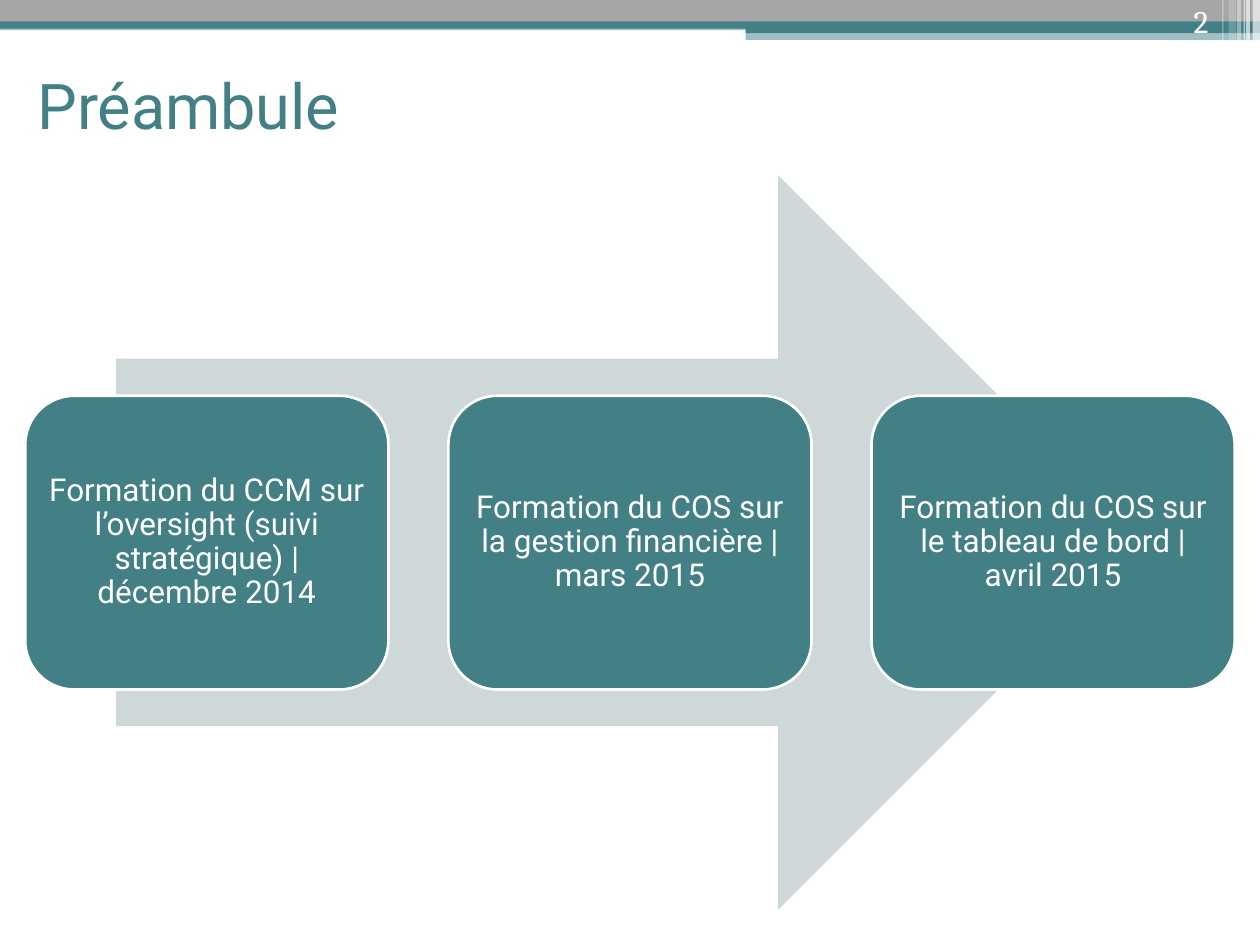
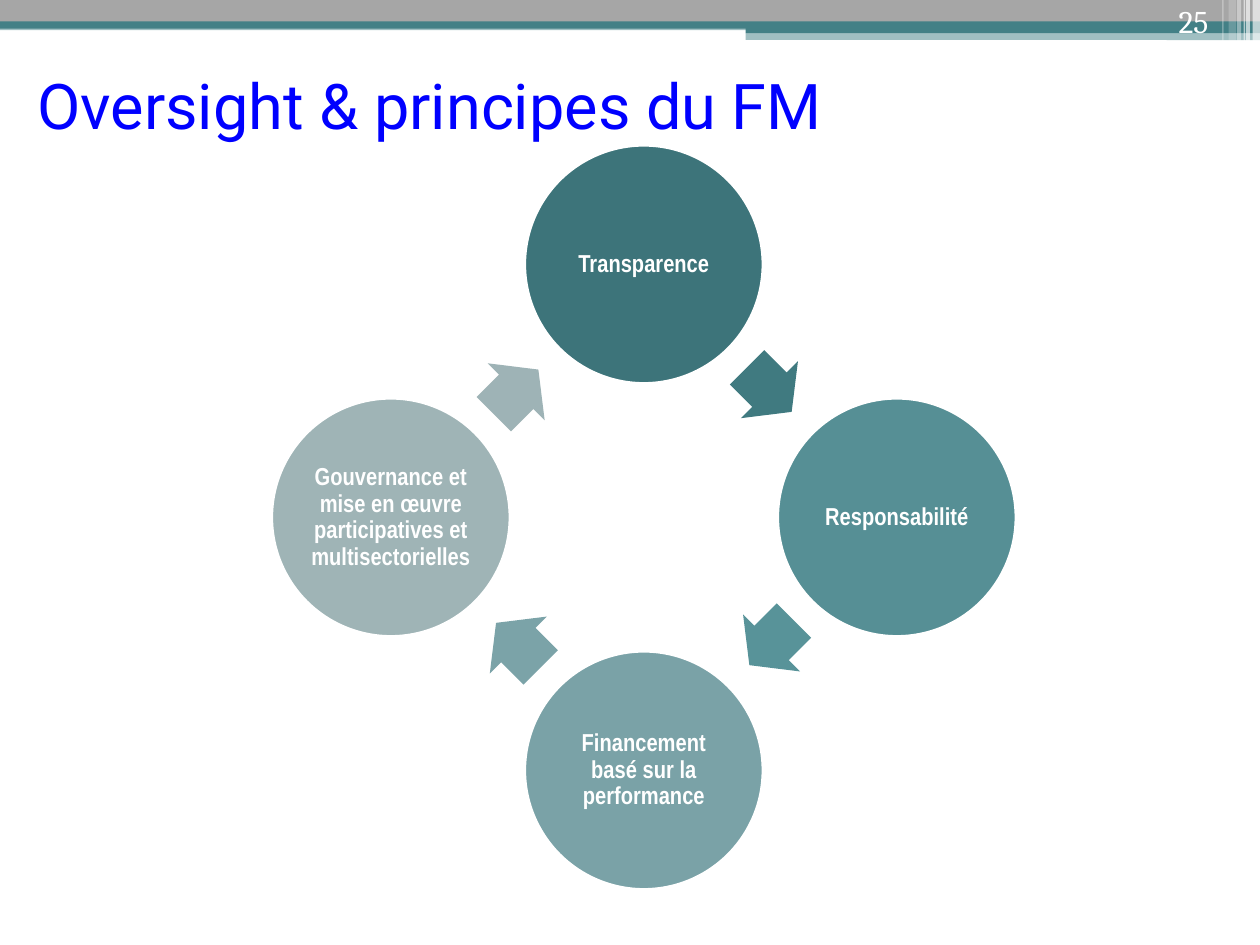
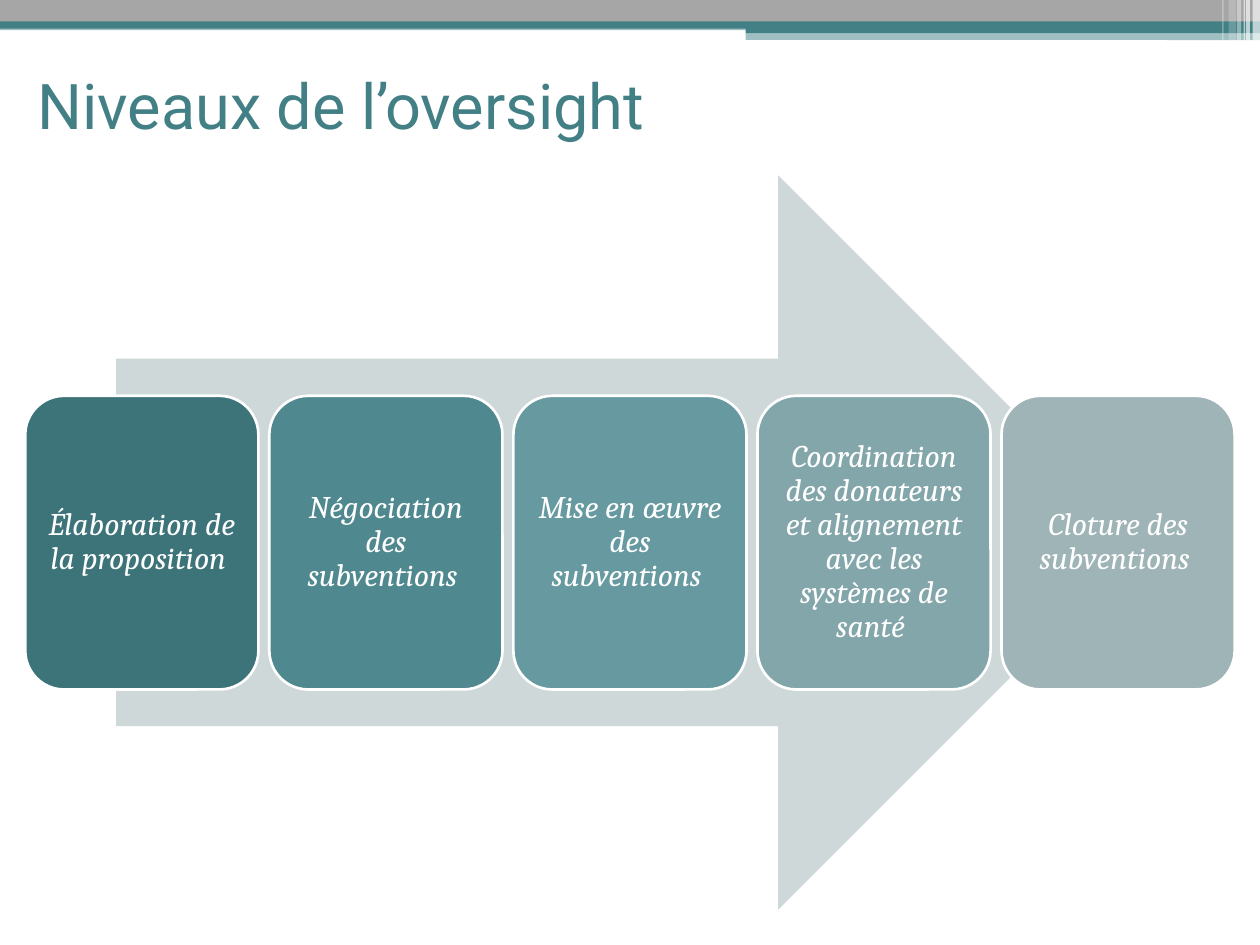
from math import cos, radians, sin

from lxml import etree
from pptx import Presentation
from pptx.dml.color import RGBColor
from pptx.enum.shapes import MSO_SHAPE
from pptx.enum.text import MSO_ANCHOR, PP_ALIGN
from pptx.oxml.ns import qn
from pptx.util import Cm, Pt

RECT, ROUNDED = MSO_SHAPE.RECTANGLE, MSO_SHAPE.ROUNDED_RECTANGLE
OVAL, ARROW = MSO_SHAPE.OVAL, MSO_SHAPE.RIGHT_ARROW
LEFT, CENTER, RIGHT = PP_ALIGN.LEFT, PP_ALIGN.CENTER, PP_ALIGN.RIGHT
MIDDLE, BOTTOM = MSO_ANCHOR.MIDDLE, MSO_ANCHOR.BOTTOM


class Theme:
    teal, grey, white, blue = "438086", "A6A6A6", "FFFFFF", "0000FF"
    pale = "CFD8D9"
    sans, serif, narrow = "Roboto", "Cambria", "Arial Narrow"
    title_size, text_size, circle_size = 36, 18, 14
    outline = 1.5


# Content
TRAININGS = [
    ("Formation du CCM sur l’oversight (suivi stratégique) | décembre 2014", Theme.teal),
    ("Formation du COS sur la gestion financière | mars 2015", Theme.teal),
    ("Formation du COS sur le tableau de bord | avril 2015", Theme.teal),
]
# principle, circle colour, colour of the arrow that follows it
PRINCIPLES = [
    ("Transparence", "3D747A", "407A80"),
    ("Responsabilité", "568F95", "589399"),
    ("Financement basé sur la performance", "7AA2A7", "7BA3A8"),
    ("Gouvernance et mise en œuvre participatives et multisectorielles", "9FB4B6", "9EB3B6"),
]
LEVELS = [
    ("Élaboration de la proposition ", "3D747A"),
    ("Négociation des subventions ", "4F898F"),
    ("Mise en œuvre des subventions ", "669AA0"),
    ("Coordination des donateurs et alignement avec les systèmes de santé ", "83A6AA"),
    ("Cloture des subventions ", "9FB4B6"),
]

# Header: preset, (left, top, width, height) in cm, colour, opacity in %
HEADER = [
    (RECT, (0, 0.53, 25.4, 0.08), Theme.teal, 50),
    (RECT, (0, 0, 25.4, 0.48), Theme.grey, 100),
    (RECT, (0, 0.43, 25.4, 0.15), Theme.teal, 100),
    (RECT, (15.03, 0.53, 10.37, 0.14), Theme.teal, 100),
    (RECT, (15.03, 0.67, 10.37, 0.14), Theme.teal, 50),
    (ROUNDED, (15.01, 0.81, 8.51, 0.05), Theme.white, 100),
    (ROUNDED, (20.47, 1.63, 4.45, 0.1), Theme.white, 100),
] + [
    (RECT, (left, 0, width, height), Theme.white, opacity)
    for left, width, height, opacity in [
        (25.25, 0.15, 1.73, 65), (25.12, 0.08, 1.73, 65), (25.07, 0.03, 1.73, 60),
        (24.94, 0.08, 1.73, 40), (24.77, 0.15, 1.63, 20), (24.64, 0.03, 1.63, 30),
    ]
]

# Layout in cm
TITLE_BOX = (0.5, 0.91, 24.4, 2.39)
NUMBER_BOX = (22.5, -0.1, 2.11, 1.02)
PROCESS_ARROW = (2.34, 3.53, 20.75, 14.81)
ROW_LEFT, ROW_TOP, ROW_WIDTH, CARD_HEIGHT = 0.51, 7.98, 24.38, 5.92
CYCLE_X, CYCLE_Y, CYCLE_RADIUS, CIRCLE = 12.98, 10.43, 5.1, 4.8
CYCLE_ARROW_RADIUS, CYCLE_ARROW_SIZE = 3.61, (1.27, 1.63)
CYCLE_ARROW_LAG = 0.5  # degrees short of the midpoint between circles


def add_shape(slide, preset, box, color, outlined=False, opacity=100):
    shape = slide.shapes.add_shape(preset, *map(Cm, box))
    shape.shadow.inherit = False
    shape.fill.solid()
    shape.fill.fore_color.rgb = RGBColor.from_string(color)
    if opacity < 100:
        rgb = shape.element.spPr.find(".//" + qn("a:srgbClr"))
        etree.SubElement(rgb, qn("a:alpha"), val=str(opacity * 1000))
    if outlined:
        shape.line.color.rgb = RGBColor.from_string(Theme.white)
        shape.line.width = Pt(Theme.outline)
    else:
        shape.line.fill.background()
    return shape


def write(shape, text, font, size, color=Theme.white, align=CENTER, anchor=MIDDLE,
          margin=None, spacing=None, bold=False, italic=False):
    frame = shape.text_frame
    frame.word_wrap = True
    frame.vertical_anchor = anchor
    if margin is not None:
        frame.margin_left = frame.margin_right = Cm(margin)
        frame.margin_top = frame.margin_bottom = Cm(margin)
    frame.text = text
    paragraph = frame.paragraphs[0]
    paragraph.alignment = align
    paragraph.line_spacing = spacing
    paragraph.font.name = font
    paragraph.font.size = Pt(size)
    paragraph.font.bold = bold
    paragraph.font.italic = italic
    paragraph.font.color.rgb = RGBColor.from_string(color)


def move_header_to_layout(slide, layout):
    """Draw the header on a slide, then hand its shapes to the shared layout."""
    tree = layout.element.cSld.spTree
    for i, (preset, box, color, opacity) in enumerate(HEADER):
        band = add_shape(slide, preset, box, color, opacity=opacity).element
        band.nvSpPr.cNvPr.set("id", str(100 + i))
        tree.insert(2 + i, band)


def add_slide(prs, layout, title, number=None, color=Theme.teal):
    slide = prs.slides.add_slide(layout)
    heading = slide.shapes.title
    heading.left, heading.top, heading.width, heading.height = map(Cm, TITLE_BOX)
    write(heading, title, Theme.sans, Theme.title_size, color, LEFT)
    if number:
        page = slide.shapes.add_textbox(*map(Cm, NUMBER_BOX))
        write(page, str(number), Theme.serif, Theme.text_size, align=RIGHT, anchor=BOTTOM)
    return slide


def add_process(slide, steps, card_width, font, italic=False):
    """Large arrow with a row of evenly spaced cards over it."""
    add_shape(slide, ARROW, PROCESS_ARROW, Theme.pale)
    pitch = (ROW_WIDTH - card_width) / (len(steps) - 1)
    for i, (text, color) in enumerate(steps):
        box = (ROW_LEFT + i * pitch, ROW_TOP, card_width, CARD_HEIGHT)
        card = add_shape(slide, ROUNDED, box, color, outlined=True)
        write(card, text, font, Theme.text_size, margin=0.18, spacing=0.9, italic=italic)


def cycle_box(angle, radius, width, height):
    """Box centred on the cycle at an angle clockwise from the top."""
    x = CYCLE_X + radius * sin(radians(angle))
    y = CYCLE_Y - radius * cos(radians(angle))
    return x - width / 2, y - height / 2, width, height


def add_cycle(slide, principles):
    step = 360 / len(principles)
    for i, (text, color, arrow_color) in enumerate(principles):
        angle = i * step
        box = cycle_box(angle, CYCLE_RADIUS, CIRCLE, CIRCLE)
        circle = add_shape(slide, OVAL, box, color, outlined=True)
        write(circle, text, Theme.narrow, Theme.circle_size, margin=0.05,
              spacing=0.9, bold=True)
        middle = angle + step / 2
        box = cycle_box(middle - CYCLE_ARROW_LAG, CYCLE_ARROW_RADIUS, *CYCLE_ARROW_SIZE)
        arrow = add_shape(slide, ARROW, box, arrow_color)
        arrow.adjustments[0] = 0.6
        arrow.rotation = middle


def main():
    prs = Presentation()
    prs.slide_width, prs.slide_height = Cm(25.4), Cm(19.05)
    layout = prs.slide_layouts.get_by_name("Title Only")

    preamble = add_slide(prs, layout, "Préambule", 2)
    move_header_to_layout(preamble, layout)
    add_process(preamble, TRAININGS, 7.32, Theme.sans)

    oversight = add_slide(prs, layout, "Oversight & principes du FM", 25, Theme.blue)
    add_cycle(oversight, PRINCIPLES)

    levels = add_slide(prs, layout, "Niveaux de l’oversight")
    add_process(levels, LEVELS, 4.7, Theme.serif, italic=True)

    prs.save("out.pptx")


if __name__ == "__main__":
    main()
